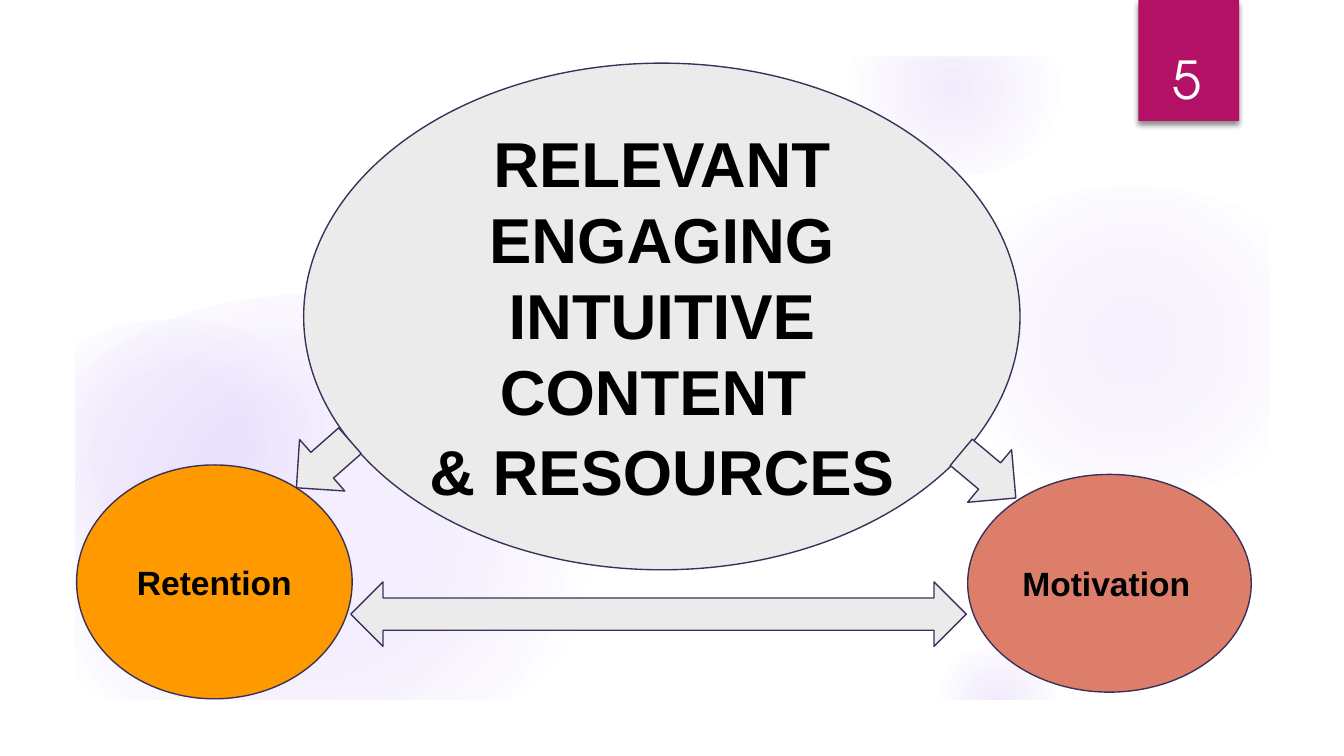
from lxml import etree
from pptx import Presentation
from pptx.dml.color import RGBColor
from pptx.enum.shapes import MSO_SHAPE as SHAPE
from pptx.enum.text import MSO_ANCHOR as ANCHOR, PP_ALIGN as ALIGN
from pptx.oxml import parse_xml
from pptx.oxml.ns import nsdecls, qn
from pptx.util import Inches, Pt

COLORS = {
    "glow": "9B6BF2",
    "frame": "FFFFFF",
    "badge": "B31166",
    "retention": "FF9900",
    "motivation": "DD7E6B",
    "neutral": "EBEBEB",
    "outline": "3B3059",
    "text": "000000",
    "number": "FFFFFF",
}
WIDTH, HEIGHT = 10, 5.625

# Box, then (position %, opacity %) of each gradient stop
GLOWS = [
    ((0, 2.38, 2.58, 1.94), [(0, 8), (36, 8), (72, 0), (100, 0)]),
    ((6.89, 1.38, 3.08, 2.31), [(0, 7), (36, 6), (69, 0), (100, 0)]),
    ((6.22, 0, 1.75, 1.31), [(0, 14), (36, 7), (73, 0), (100, 0)]),
    ((6.89, 4.81, 1.08, 0.81), [(0, 14), (36, 7), (66, 0), (100, 0)]),
    ((0, 2.19, 4.58, 3.44), [(0, 11), (36, 10), (75, 0), (100, 0)]),
]


def rgb(name):
    return RGBColor.from_string(COLORS[name])


def inches(values):
    return [Inches(value) for value in values]


def add_filled(slide, kind, box, fill, outlined=False):
    shape = slide.shapes.add_shape(kind, *inches(box))
    shape.shadow.inherit = False
    shape.fill.solid()
    shape.fill.fore_color.rgb = rgb(fill)
    if outlined:
        shape.line.color.rgb = rgb("outline")
        shape.line.width = Pt(0.75)
    else:
        shape.line.fill.background()
    return shape


def add_glow(slide, box, stops):
    """Add an ellipse that fades out from its centre."""
    glow = add_filled(slide, SHAPE.OVAL, box, "glow")
    stop_xml = "".join(
        f'<a:gs pos="{position * 1000}"><a:srgbClr val="{COLORS["glow"]}">'
        f'<a:alpha val="{opacity * 1000}"/></a:srgbClr></a:gs>'
        for position, opacity in stops
    )
    gradient = parse_xml(
        f'<a:gradFill {nsdecls("a")} rotWithShape="1"><a:gsLst>{stop_xml}</a:gsLst>'
        '<a:path path="circle"><a:fillToRect l="50000" t="50000" r="50000" b="50000"/>'
        "</a:path></a:gradFill>"
    )
    properties = glow._element.spPr
    properties.replace(properties.find(qn("a:solidFill")), gradient)


def add_frame(slide):
    """Cover the slide's margins with a white border that has a rectangular hole."""
    outer = [(0, 0), (0, HEIGHT), (WIDTH, HEIGHT), (WIDTH, 0)]
    hole = [(9.45, 5.21), (0.56, 5.21), (0.56, 0.42), (9.45, 0.42)]
    builder = slide.shapes.build_freeform(*inches(outer[0]))
    builder.add_line_segments([inches(point) for point in outer[1:]], close=True)
    builder.move_to(*inches(hole[0]))
    builder.add_line_segments([inches(point) for point in hole[1:]], close=True)
    frame = builder.convert_to_shape()
    frame.shadow.inherit = False
    frame.fill.solid()
    frame.fill.fore_color.rgb = rgb("frame")
    frame.line.fill.background()


def add_badge(slide):
    badge = add_filled(slide, SHAPE.RECTANGLE, (8.47, 0, 0.75, 0.9), "badge")
    effects = badge._element.spPr.find(qn("a:effectLst"))
    shadow = etree.SubElement(
        effects, qn("a:outerShdw"), blurRad=str(Pt(3)), dist=str(Pt(2)),
        dir="5400000", algn="ctr", rotWithShape="0",
    )
    color = etree.SubElement(shadow, qn("a:srgbClr"), val="000000")
    etree.SubElement(color, qn("a:alpha"), val="45000")


def write(shape, paragraphs, font, color, bold, anchor, margin_y, align=ALIGN.CENTER):
    """Fill a shape with paragraphs, each a list of (text, size) runs."""
    frame = shape.text_frame
    frame.word_wrap = True
    frame.vertical_anchor = anchor
    frame.margin_left = frame.margin_right = Inches(0.1)
    frame.margin_top = frame.margin_bottom = Inches(margin_y)
    for index, runs in enumerate(paragraphs):
        paragraph = frame.add_paragraph() if index else frame.paragraphs[0]
        paragraph.alignment = align
        for text, size in runs:
            run = paragraph.add_run()
            run.text = text
            run.font.name = font
            run.font.size = Pt(size)
            run.font.bold = bold
            run.font.color.rgb = rgb(color)


def add_bubble(slide, box, fill, paragraphs, align=ALIGN.CENTER):
    bubble = add_filled(slide, SHAPE.OVAL, box, fill, outlined=True)
    write(bubble, paragraphs, "Arial", "text", True, ANCHOR.MIDDLE, 0.1, align)


def add_block_arrow(slide, kind, box, rotation=0):
    arrow = add_filled(slide, kind, box, "neutral", outlined=True)
    arrow.rotation = rotation


def add_slide_number(slide):
    number = slide.shapes.add_textbox(*inches((8.4, 0.24, 0.87, 0.63)))
    write(number, [[("5", 28)]], "TeX Gyre Adventor", "number", False,
          ANCHOR.BOTTOM, 0.05)


def main():
    deck = Presentation()
    deck.slide_width, deck.slide_height = inches((WIDTH, HEIGHT))
    slide = deck.slides.add_slide(deck.slide_layouts[6])

    for box, stops in GLOWS:
        add_glow(slide, box, stops)
    add_frame(slide)
    add_badge(slide)

    add_bubble(slide, (0.57, 3.46, 2.05, 1.74), "retention", [[("Retention", 18)]])
    add_bubble(slide, (7.2, 3.53, 2.11, 1.62), "motivation",
               [[("Motivation", 18)]], ALIGN.LEFT)
    add_bubble(slide, (2.26, 0.47, 5.33, 3.77), "neutral", [
        [("RELEVANT ENGAGING INTUITIVE CONTENT ", 34)],
        [("& RESOURCES", 34), (" ", 36)],
    ])

    add_block_arrow(slide, SHAPE.LEFT_ARROW, (2.14, 3.2, 0.53, 0.51), 318.7)
    add_block_arrow(slide, SHAPE.LEFT_ARROW, (7.09, 3.28, 0.53, 0.51), 219.9)
    add_block_arrow(slide, SHAPE.LEFT_RIGHT_ARROW, (2.61, 4.33, 4.58, 0.48))
    add_slide_number(slide)

    deck.save("out.pptx")


if __name__ == "__main__":
    main()
